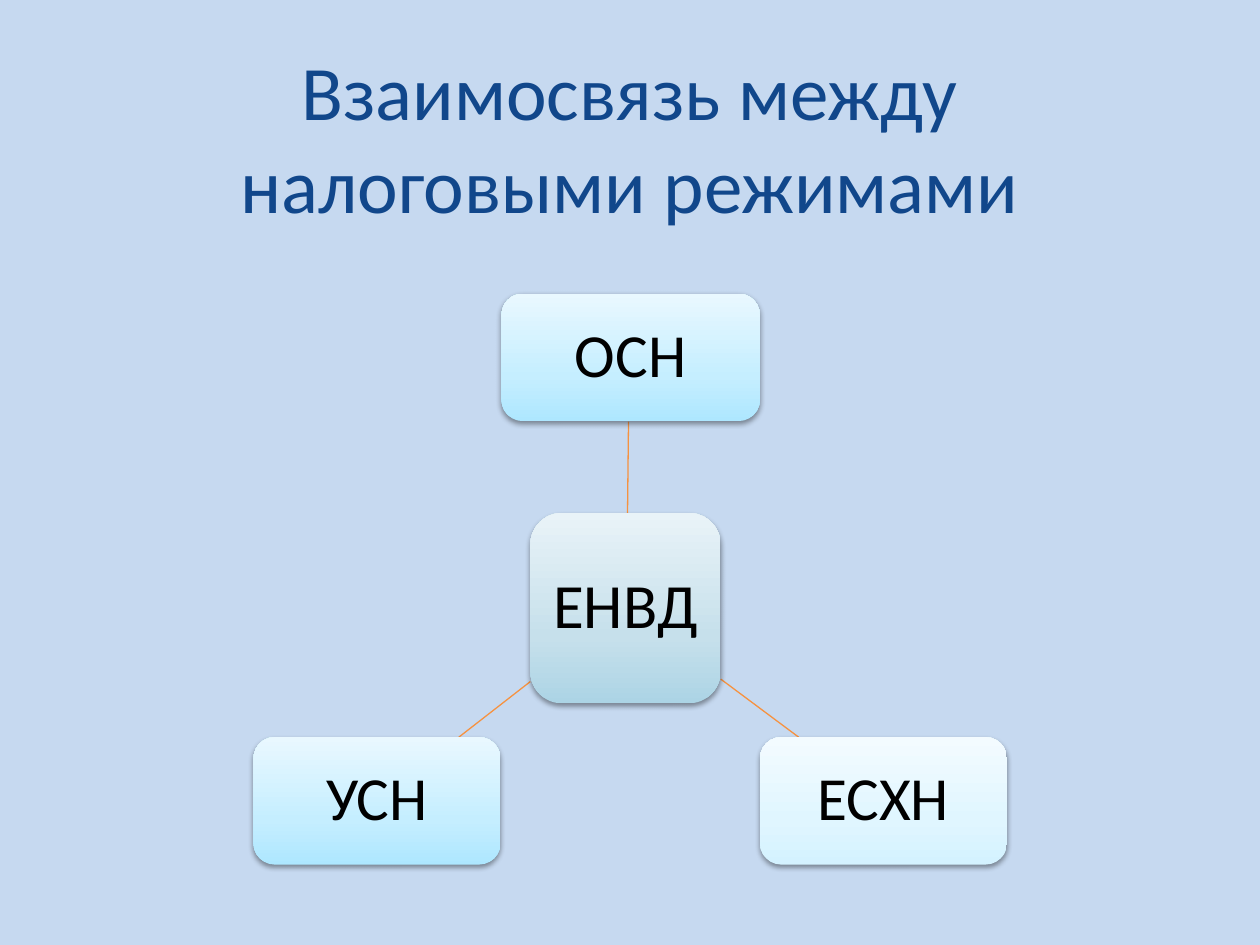
"""Slide showing how the tax regimes relate to one another."""
import copy

import lxml.etree
import pptx
import pptx.dml.color
import pptx.enum.shapes
import pptx.enum.text
import pptx.oxml.ns
import pptx.util

Cm = pptx.util.Cm
Pt = pptx.util.Pt
qn = pptx.oxml.ns.qn

COLOURS = {
    "background": "C6D9F0",
    "title": "11478B",
    "label": "000000",
    "link": "F69240",
    "shadow": "000000",
}
GRADIENTS = {
    "grey": ("ACD4E5", "C6E0EB", "E9F3F8"),
    "blue": ("AEE7FF", "C5EEFF", "E9F8FF"),
    "pale": ("D4F2FF", "E0F6FF", "F3FBFF"),
}
STOP_POSITIONS = (0, 0.35, 1)


def rgb(colour):
    return pptx.dml.color.RGBColor.from_string(colour)


def write_centred(frame, text, size, colour):
    frame.word_wrap = True
    frame.vertical_anchor = pptx.enum.text.MSO_ANCHOR.MIDDLE
    paragraph = frame.paragraphs[0]
    paragraph.alignment = pptx.enum.text.PP_ALIGN.CENTER
    run = paragraph.add_run()
    run.text = text
    run.font.name = "Calibri"
    run.font.size = Pt(size)
    run.font.color.rgb = rgb(colour)
    return paragraph


presentation = pptx.Presentation()
presentation.slide_width = Cm(25.4)
presentation.slide_height = Cm(19.05)
slide = presentation.slides.add_slide(presentation.slide_layouts[6])
slide.background.fill.solid()
slide.background.fill.fore_color.rgb = rgb(COLOURS["background"])

title = slide.shapes.add_textbox(Cm(1.9), Cm(0.7), Cm(21.6), Cm(4.1))
write_centred(title.text_frame, "Взаимосвязь между налоговыми режимами", 44, COLOURS["title"])

links = [
    (12.65, 10.34, 12.67, 8.5),
    (14.53, 13.69, 16.1, 14.86),
    (10.69, 13.74, 9.25, 14.86),
]
for ends in links:
    link = slide.shapes.add_connector(
        pptx.enum.shapes.MSO_CONNECTOR.STRAIGHT, *(Cm(end) for end in ends))
    link.line.color.rgb = rgb(COLOURS["link"])
    link.line.width = Pt(0.75)
    lxml.etree.SubElement(link._element.spPr, qn("a:effectLst"))

regimes = [
    ("ЕНВД", 36, "grey", 10.69, 10.34, 3.84, 3.84),
    ("ОСН", 35, "blue", 10.11, 5.92, 5.21, 2.57),
    ("ЕСХН", 35, "pale", 15.32, 14.86, 4.98, 2.57),
    ("УСН", 35, "blue", 5.11, 14.86, 4.98, 2.57),
]
for name, size, gradient, *place in regimes:
    regime = slide.shapes.add_shape(
        pptx.enum.shapes.MSO_SHAPE.ROUNDED_RECTANGLE, *(Cm(length) for length in place))
    regime.line.fill.background()
    regime.fill.gradient()
    regime.fill.gradient_angle = 90
    stop_list = regime._element.spPr.find(".//" + qn("a:gsLst"))
    stop_list.insert(1, copy.deepcopy(stop_list[0]))
    for stop, position, colour in zip(
            regime.fill.gradient_stops, STOP_POSITIONS, GRADIENTS[gradient]):
        stop.position = position
        stop.color.rgb = rgb(colour)

    regime.shadow.inherit = False
    effects = regime._element.spPr.find(qn("a:effectLst"))
    shadow = lxml.etree.SubElement(
        effects, qn("a:outerShdw"), blurRad="40000", dist="20000",
        dir="5400000", rotWithShape="0")
    shade = lxml.etree.SubElement(shadow, qn("a:srgbClr"), val=COLOURS["shadow"])
    lxml.etree.SubElement(shade, qn("a:alpha"), val="38000")

    label = write_centred(regime.text_frame, name, size, COLOURS["label"])
    label.line_spacing = 0.9
    regime.text_frame.margin_left = regime.text_frame.margin_right = Cm(0.25)
    regime.text_frame.margin_top = regime.text_frame.margin_bottom = Cm(0.25)

presentation.save("out.pptx")
